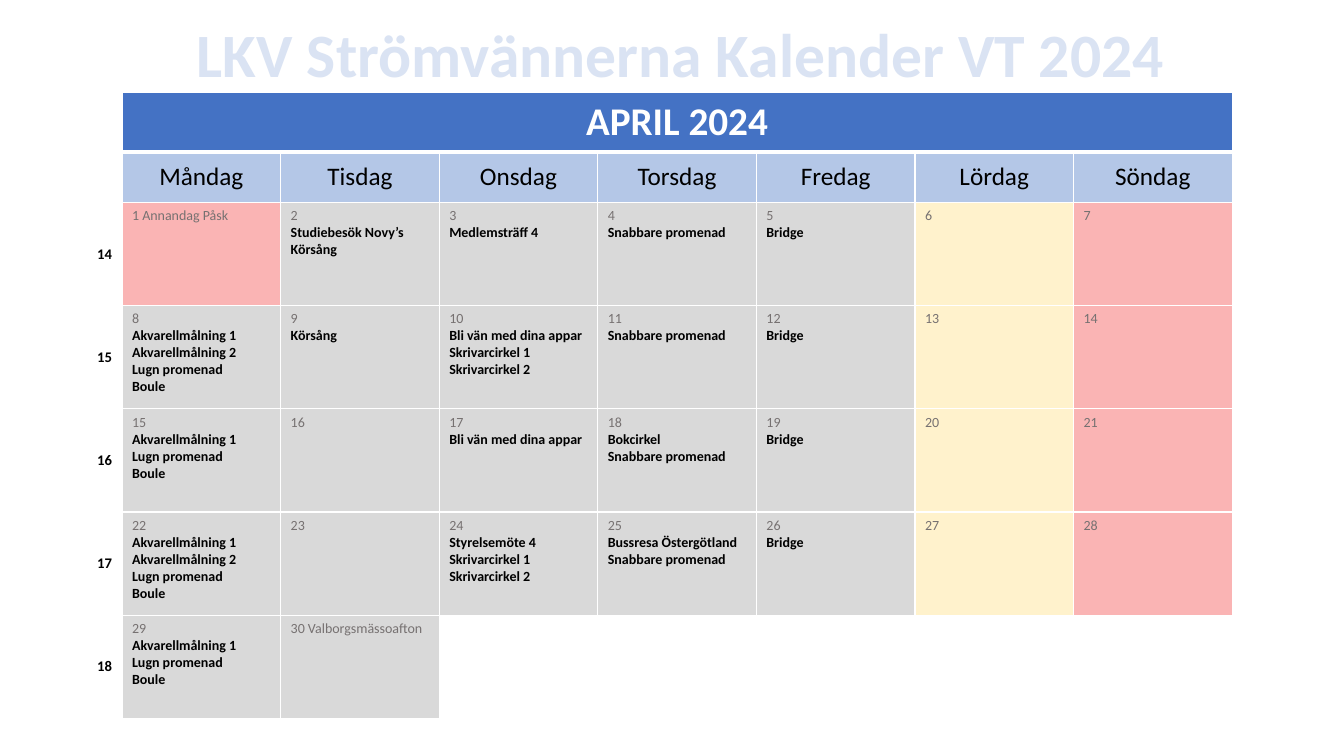
from pptx import Presentation
from pptx.dml.color import RGBColor as RGB
from pptx.enum.text import MSO_ANCHOR as Anchor, PP_ALIGN as Align
from pptx.oxml import parse_xml
from pptx.oxml.ns import nsdecls
from pptx.util import Inches, Pt

WHITE = RGB(0xFF, 0xFF, 0xFF)
BLACK = RGB(0, 0, 0)
BLUE = RGB(0x44, 0x72, 0xC4)
SKY = RGB(0xB4, 0xC7, 0xE7)
PALE = RGB(0xDA, 0xE3, 0xF3)
GREY = RGB(0xD9, 0xD9, 0xD9)
DIM = RGB(0x76, 0x71, 0x71)
CREAM = RGB(0xFF, 0xF2, 0xCC)
ROSE = RGB(0xFA, 0xB4, 0xB4)

TITLE = {"size": Pt(44), "bold": True, "color": PALE}
MONTH = {"size": Pt(28), "bold": True, "color": WHITE}
HEAD = {"size": Pt(18), "bold": False, "color": BLACK}
WEEK = {"size": Pt(10.5), "bold": True, "color": BLACK}
DATE = {"size": Pt(10), "bold": False, "color": DIM}
EVENT = {"size": Pt(10), "bold": True, "color": BLACK}

DAYS = ["Måndag", "Tisdag", "Onsdag", "Torsdag", "Fredag", "Lördag", "Söndag"]
TINTS = [GREY] * 5 + [CREAM, ROSE]
FIRST, LAST = 14, 30  # first week number, last date of the month
NAMES = {1: "1 Annandag Påsk", 30: "30 Valborgsmässoafton"}

PAINT = ["Akvarellmålning 1", "Akvarellmålning 2"]
OUT = ["Lugn promenad", "Boule"]
VERSE = ["Skrivarcirkel 1", "Skrivarcirkel 2"]
APPS = "Bli vän med dina appar"
WALK = "Snabbare promenad"
EVENTS = {
    2: ["Studiebesök Novy’s", "Körsång"],
    3: ["Medlemsträff 4"],
    4: [WALK],
    8: PAINT + OUT,
    9: ["Körsång"],
    10: [APPS] + VERSE,
    11: [WALK],
    15: PAINT[:1] + OUT,
    17: [APPS],
    18: ["Bokcirkel", WALK],
    22: PAINT + OUT,
    24: ["Styrelsemöte 4"] + VERSE,
    25: ["Bussresa Östergötland", WALK],
    29: PAINT[:1] + OUT,
}
EVENTS.update({day: ["Bridge"] for day in range(5, LAST, 7)})

# Shares of the slide, in percent
LEFT, TOP = 5.93, 12.25
COLS = [3.15] + [11.8] * 7
ROWS = [7.87, 6.67] + [13.65] * 5


class Board:
    """Holds the slide and the style, and draws the elements."""

    def __init__(self, deck, font="Calibri"):
        self.wide, self.high = deck.slide_width, deck.slide_height
        self.slide = deck.slides.add_slide(deck.slide_layouts[6])
        self.font = font

    def x(self, share):
        return round(self.wide * share / 100)

    def y(self, share):
        return round(self.high * share / 100)

    def text(self, frame, lines, align):
        for i, (words, style) in enumerate(lines):
            para = frame.paragraphs[0] if i == 0 else frame.add_paragraph()
            para.alignment = align
            run = para.add_run()
            run.text = words
            run.font.name = self.font
            for key, value in style.items():
                if key == "color":
                    run.font.color.rgb = value
                else:
                    setattr(run.font, key, value)

    def label(self, left, top, width, height, words, style):
        box = self.slide.shapes.add_textbox(
            self.x(left), self.y(top), self.x(width), self.y(height))
        frame = box.text_frame
        frame.word_wrap = True
        frame.vertical_anchor = Anchor.MIDDLE
        self.text(frame, [(words, style)], Align.CENTER)

    def table(self, left, top, cols, rows):
        grid = self.slide.shapes.add_table(
            len(rows), len(cols), self.x(left), self.y(top),
            self.x(sum(cols)), self.y(sum(rows))).table
        grid.first_row = grid.horz_banding = False
        for col, share in zip(grid.columns, cols):
            col.width = self.x(share)
        for row, share in zip(grid.rows, rows):
            row.height = self.y(share)
        return grid

    def edge(self, cell, sides):
        props = cell._tc.get_or_add_tcPr()
        for side, width in sides.items():
            props.append(parse_xml(
                f'<a:ln{side} {nsdecls("a")} w="{Pt(width)}"><a:solidFill>'
                f'<a:srgbClr val="{WHITE}"/></a:solidFill></a:ln{side}>'))

    def cell(self, cell, fill, lines=(), align=Align.LEFT, anchor=Anchor.MIDDLE):
        cell.fill.solid()
        cell.fill.fore_color.rgb = fill
        cell.vertical_anchor = anchor
        self.text(cell.text_frame, lines, align)


def main():
    deck = Presentation()
    deck.slide_width, deck.slide_height = Inches(13.33), Inches(7.5)
    board = Board(deck)

    # Title
    board.label(LEFT, 1.6, 89.5, 10.67, "LKV Strömvännerna Kalender VT 2024", TITLE)

    # Grid, with a thick rule under the month
    grid = board.table(LEFT, TOP, COLS, ROWS)
    for r in range(len(ROWS)):
        for c in range(len(COLS)):
            board.edge(grid.cell(r, c), {
                "L": 1, "R": 1, "T": 3 if r == 1 else 1, "B": 3 if r == 0 else 1})

    # Month and weekday heads
    grid.cell(0, 1).merge(grid.cell(0, 7))
    board.cell(grid.cell(0, 1), BLUE, [("APRIL 2024", MONTH)], Align.CENTER)
    for r in range(2):
        board.cell(grid.cell(r, 0), WHITE)
    for c, name in enumerate(DAYS, 1):
        board.cell(grid.cell(1, c), SKY, [(name, HEAD)], Align.CENTER)

    # Weeks and their days
    for w in range(5):
        board.cell(grid.cell(w + 2, 0), WHITE, [(str(FIRST + w), WEEK)], Align.RIGHT)
        for c, tint in enumerate(TINTS, 1):
            day, spot = 7 * w + c, grid.cell(w + 2, c)
            if day > LAST:
                board.cell(spot, WHITE)
                continue
            lines = [(NAMES.get(day, str(day)), DATE)]
            lines += [(event, EVENT) for event in EVENTS.get(day, [])]
            board.cell(spot, ROSE if day == 1 else tint, lines, anchor=Anchor.TOP)

    deck.save("out.pptx")


if __name__ == "__main__":
    main()
